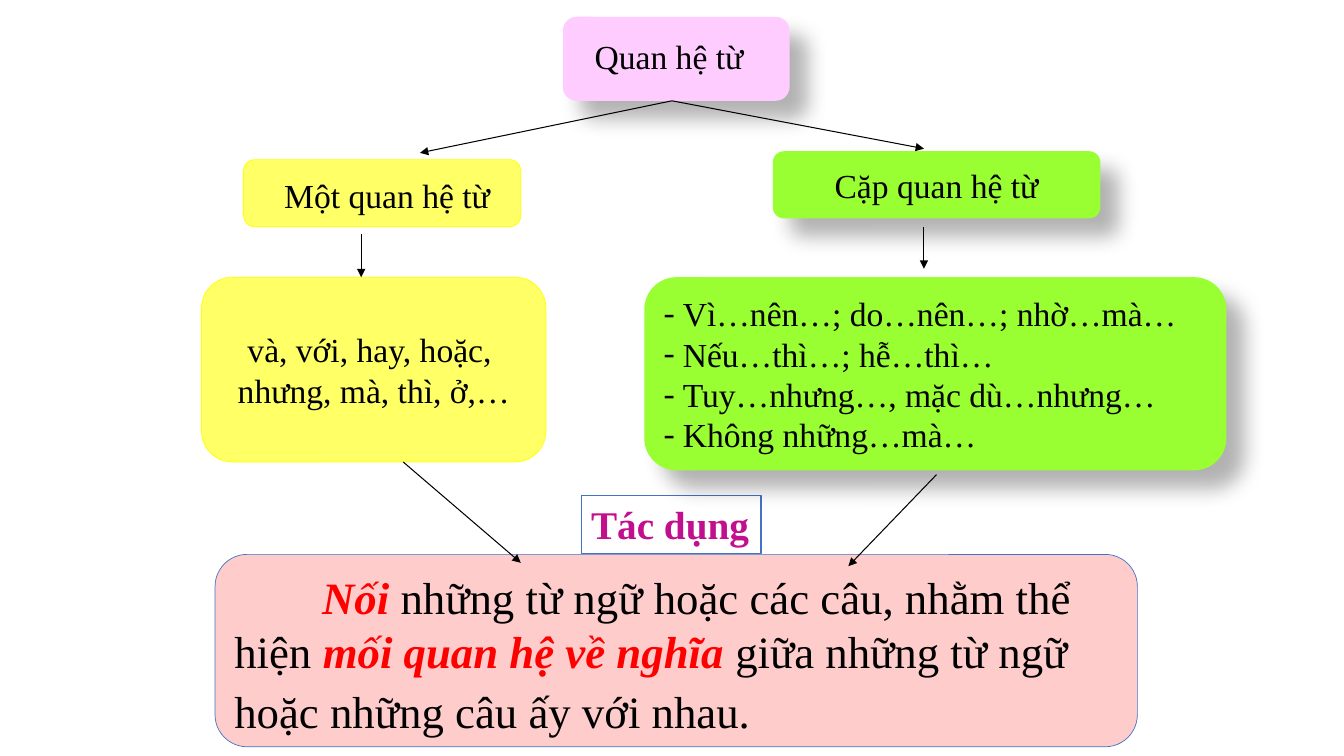
from dataclasses import dataclass

from lxml import etree
from pptx import Presentation
from pptx.dml.color import RGBColor
from pptx.enum.shapes import MSO_CONNECTOR, MSO_SHAPE
from pptx.enum.text import MSO_ANCHOR, PP_ALIGN
from pptx.oxml.ns import qn
from pptx.util import Emu, Inches, Pt

ROUND, RECT = MSO_SHAPE.ROUNDED_RECTANGLE, MSO_SHAPE.RECTANGLE
STRAIGHT = MSO_CONNECTOR.STRAIGHT
LEFT, CENTER, JUSTIFY = PP_ALIGN.LEFT, PP_ALIGN.CENTER, PP_ALIGN.JUSTIFY
TOP, MIDDLE = MSO_ANCHOR.TOP, MSO_ANCHOR.MIDDLE


@dataclass(frozen=True)
class Theme:
    font: str = "Times New Roman"
    ink: str = "000000"
    violet: str = "FFCCFF"
    yellow: str = "FFFF66"
    yellow_edge: str = "FFFF00"
    green: str = "99FF33"
    pink: str = "FFCCCC"
    blue: str = "4472C4"
    magenta: str = "C10F8E"
    red: str = "FF0000"
    white: str = "FFFFFF"
    body: int = 24
    label: int = 28
    purpose: int = 32


T = Theme()
COLS, ROWS = 160, 90  # grid cells of a twelfth of an inch
CELL = Inches(1) / 12
KEY = dict(color=T.red, bold=True, italic=True)

# Each paragraph is a list of (text, format) runs.
TITLE = [[("Quan hệ từ", {})]]
SINGLE = [[(" ", dict(size=T.label)), ("Một quan hệ từ", {})]]
PAIR = [[("Cặp quan hệ từ", {})]]
SINGLE_WORDS = [[("và, với, hay, hoặc, ", {})], [("nhưng, mà, thì, ở,…", {})]]
PAIR_WORDS = [[(line, {})] for line in (
    "Vì…nên…; do…nên…; nhờ…mà…",
    "Nếu…thì…; hễ…thì…",
    "Tuy…nhưng…, mặc dù…nhưng…",
    "Không những…mà…",
)]
PURPOSE_LABEL = [[("Tác dụng", dict(size=T.label, color=T.magenta, bold=True))]]
PURPOSE = [
    [("Nối", KEY), (" những từ ngữ hoặc các câu, nhằm thể", {})],
    [("hiện ", {}), ("mối quan hệ về nghĩa ", KEY), ("giữa những từ ngữ", {})],
    [("hoặc những câu ấy với nhau.", {})],
]

# (left, top, width, height) in cells, fill, other format
BOXES = [
    ((67, 2, 27, 10), T.violet, dict(shadow=True)),
    ((69.6, 3.7, 20.1, 6), T.violet,
     dict(kind=RECT, text=TITLE, align=LEFT, anchor=TOP, wrap=False)),
    ((29, 19, 33, 8), T.yellow, dict(line=T.yellow_edge, text=SINGLE)),
    ((92, 18, 39, 8), T.green, dict(shadow=True, text=PAIR)),
    ((69.2, 59, 21.4, 6.9), T.white,
     dict(kind=RECT, line=T.blue, weight=1, text=PURPOSE_LABEL, align=LEFT,
          anchor=TOP, wrap=False)),
    ((25.6, 66, 109.8, 22.9), T.pink,
     dict(line=T.blue, text=PURPOSE, align=JUSTIFY, size=T.purpose,
          first_indent=0.87, last_gap=4, margin_top=0.11)),
    ((24, 33, 41, 22), T.yellow, dict(line=T.yellow_edge, text=SINGLE_WORDS)),
    ((76.7, 33, 69.3, 23), T.green,
     dict(shadow=True, text=PAIR_WORDS, align=LEFT, bullet="-")),
]
ARROWS = [
    ((80, 12), (50, 18.2)), ((80, 12), (110, 17.7)),
    ((43, 27.8), (43, 33)), ((110, 27), (110, 32)),
    ((48, 55), (62, 67)), ((111.5, 56.5), (101, 67.4)),
]


def cells(values):
    return [Emu(round(v * CELL)) for v in values]


def rgb(color):
    return RGBColor.from_string(color)


def add_shadow(sp):
    """Soft black shadow, 18 pt down and to the right."""
    effects = sp._element.spPr.find(qn("a:effectLst"))
    outer = etree.SubElement(
        effects, qn("a:outerShdw"), blurRad=str(Pt(15)), dist=str(Pt(18)),
        dir=str(45 * 60000), algn="tl", rotWithShape="0")
    color = etree.SubElement(outer, qn("a:srgbClr"), val=T.ink)
    etree.SubElement(color, qn("a:alpha"), val="30000")


def add_bullet(p, char, hang=0.19):
    pPr = p._p.get_or_add_pPr()
    pPr.set("marL", str(Inches(hang)))
    pPr.set("indent", str(-Inches(hang)))
    etree.SubElement(pPr, qn("a:buFont"), typeface=T.font)
    etree.SubElement(pPr, qn("a:buChar"), char=char)


def add_run(p, text, size=T.body, color=T.ink, bold=False, italic=False):
    r = p.add_run()
    r.text = text
    f = r.font
    f.name, f.size, f.bold, f.italic = T.font, Pt(size), bold, italic
    f.color.rgb = rgb(color)


def write(tf, paragraphs, align=CENTER, anchor=MIDDLE, wrap=True, size=T.body,
          bullet=None, first_indent=0, last_gap=0, margin_top=0.05):
    tf.word_wrap, tf.vertical_anchor = wrap, anchor
    tf.margin_top = Inches(margin_top)
    for i, runs in enumerate(paragraphs):
        p = tf.add_paragraph() if i else tf.paragraphs[0]
        p.alignment = align
        if bullet:
            add_bullet(p, bullet)
        if first_indent and i == 0:
            p._p.get_or_add_pPr().set("indent", str(Inches(first_indent)))
        if last_gap and i == len(paragraphs) - 1:
            p.space_before = Pt(last_gap)
        for text, style in runs:
            add_run(p, text, **{"size": size, **style})


def add_box(slide, place, fill, kind=ROUND, line=None, weight=0.5,
            shadow=False, text=None, **style):
    sp = slide.shapes.add_shape(kind, *cells(place))
    sp.shadow.inherit = False
    if shadow:
        add_shadow(sp)
    sp.fill.solid()
    sp.fill.fore_color.rgb = rgb(fill)
    if line:
        sp.line.color.rgb = rgb(line)
        sp.line.width = Pt(weight)
    else:
        sp.line.fill.background()
    if text:
        write(sp.text_frame, text, **style)


def add_arrow(slide, start, end):
    c = slide.shapes.add_connector(STRAIGHT, *cells(start + end))
    c.line.color.rgb = rgb(T.ink)
    c.line.width = Pt(0.75)
    etree.SubElement(c.line._get_or_add_ln(), qn("a:tailEnd"), type="triangle")
    etree.SubElement(c._element.spPr, qn("a:effectLst"))


def main():
    prs = Presentation()
    prs.slide_width, prs.slide_height = cells((COLS, ROWS))
    slide = prs.slides.add_slide(prs.slide_layouts[6])
    for place, fill, style in BOXES:
        add_box(slide, place, fill, **style)
    for start, end in ARROWS:
        add_arrow(slide, start, end)
    prs.save("out.pptx")


if __name__ == "__main__":
    main()
